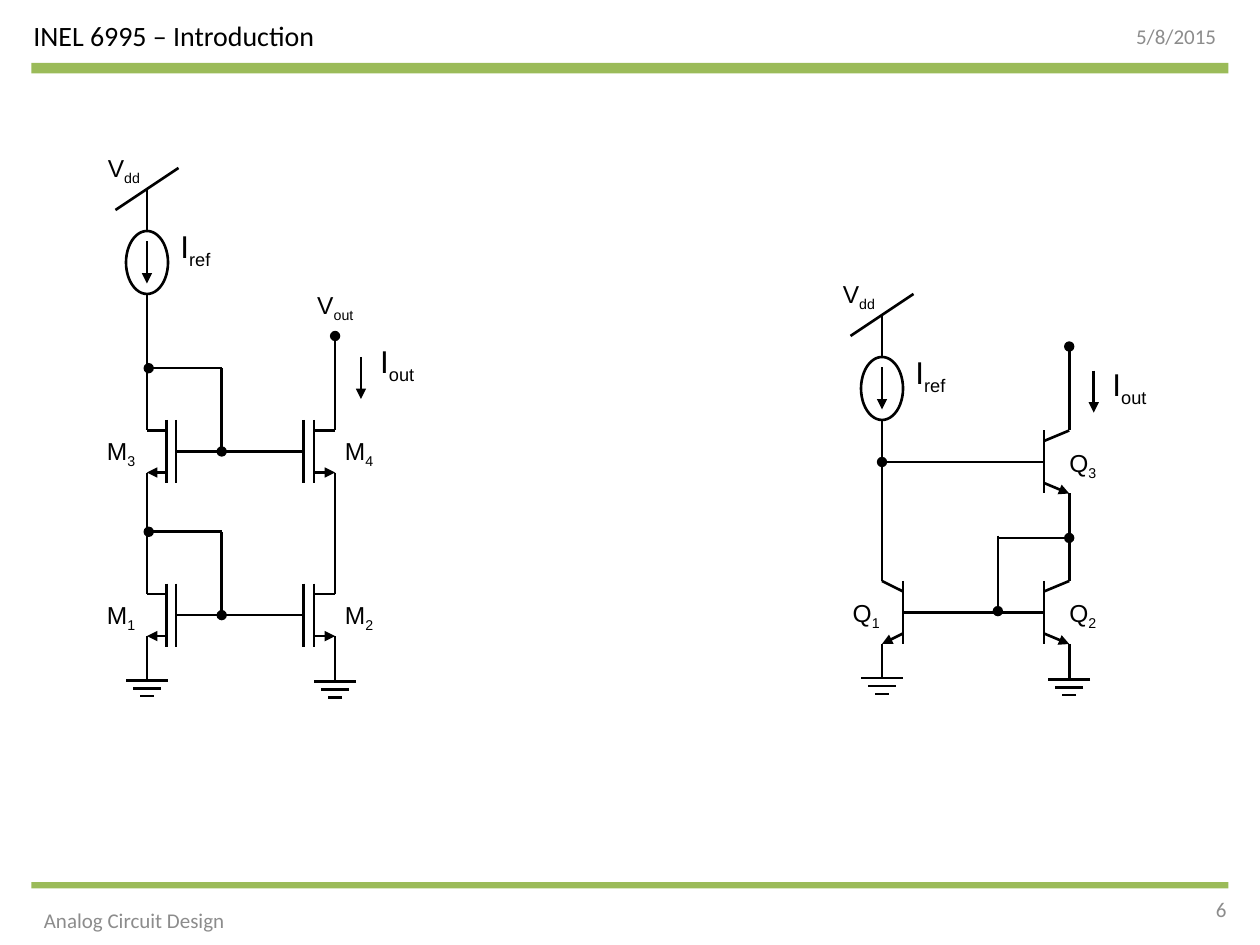
from lxml import etree
from pptx import Presentation
from pptx.dml.color import RGBColor
from pptx.enum.shapes import MSO_CONNECTOR, MSO_SHAPE
from pptx.enum.text import MSO_ANCHOR, MSO_AUTO_SIZE, PP_ALIGN
from pptx.oxml.ns import qn
from pptx.util import Pt

STRAIGHT = MSO_CONNECTOR.STRAIGHT
OVAL, RECTANGLE = MSO_SHAPE.OVAL, MSO_SHAPE.RECTANGLE
LEFT, RIGHT = PP_ALIGN.LEFT, PP_ALIGN.RIGHT
MIDDLE = MSO_ANCHOR.MIDDLE
FIT_SHAPE = MSO_AUTO_SIZE.SHAPE_TO_FIT_TEXT
rgb = RGBColor.from_string
BLACK, GRAY, GREEN = "000000", "8C8C8C", "9BBB59"
LINE_WIDTH = Pt(1.5)


def wire(circuit, x1, y1, x2, y2, head=None, tail=None):
    """Draw a line; head and tail name the end marks at its start and end."""
    line = circuit.shapes.add_connector(STRAIGHT, Pt(x1), Pt(y1), Pt(x2), Pt(y2))
    line.line.color.rgb = rgb(BLACK)
    line.line.width = LINE_WIDTH
    properties = line._element.spPr
    outline = properties.find(qn("a:ln"))
    for tag, mark in (("a:headEnd", head), ("a:tailEnd", tail)):
        if mark:
            etree.SubElement(outline, qn(tag), type=mark)
    etree.SubElement(properties, qn("a:effectLst"))


def label(circuit, x, y, symbol, subscript, width, size=14):
    height = 28.8 if size == 18 else 24.5
    box = circuit.shapes.add_textbox(Pt(x), Pt(y), Pt(width), Pt(height))
    frame = box.text_frame
    frame.word_wrap = False
    frame.auto_size = FIT_SHAPE
    paragraph = frame.paragraphs[0]
    paragraph.font.size = Pt(size)
    paragraph.font.name = "Arial"
    paragraph.font.color.rgb = rgb(BLACK)
    paragraph.add_run().text = symbol
    lowered = paragraph.add_run()
    lowered.text = subscript
    lowered._r.get_or_add_rPr().set("baseline", "-25000")


prs = Presentation()
prs.slide_width, prs.slide_height = Pt(720), Pt(540)
slide = prs.slides.add_slide(prs.slide_layouts[6])

# Header and footer
for top, height in ((36, 6), (504, 3.6)):
    rule = slide.shapes.add_shape(RECTANGLE, Pt(18), Pt(top), Pt(684), Pt(height))
    rule.shadow.inherit = False
    rule.fill.solid()
    rule.fill.fore_color.rgb = rgb(GREEN)
    rule.line.fill.background()

for left, top, width, text, size, color, align in (
    (12, 6, 240, "INEL 6995 – Introduction", 16, BLACK, LEFT),
    (534, 6, 168, "5/8/2015", 12, GRAY, RIGHT),
    (18, 511.2, 126, "Analog Circuit Design", 12, GRAY, LEFT),
    (540, 505.2, 168, "6", 12, GRAY, RIGHT),
):
    box = slide.shapes.add_textbox(Pt(left), Pt(top), Pt(width), Pt(28.8))
    frame = box.text_frame
    frame.word_wrap = True
    frame.vertical_anchor = MIDDLE
    paragraph = frame.paragraphs[0]
    paragraph.text = text
    paragraph.alignment = align
    paragraph.font.size = Pt(size)
    paragraph.font.name = "Calibri"
    paragraph.font.color.rgb = rgb(color)

mos = slide.shapes.add_group_shape()
bipolar = slide.shapes.add_group_shape()
MOS_REF, MOS_OUT = 84, 191.5
BJT_REF, BJT_OUT = 504, 611

# Supply and reference current source of each mirror
for circuit, x, top in ((mos, MOS_REF, 96), (bipolar, BJT_REF, 168)):
    wire(circuit, x + 18, top, x - 18, top + 24)
    wire(circuit, x, top + 12, x, top + 36)
    source = circuit.shapes.add_shape(OVAL, Pt(x - 12), Pt(top + 36), Pt(24), Pt(36))
    source.shadow.inherit = False
    source.fill.background()
    source.line.color.rgb = rgb(BLACK)
    source.line.width = LINE_WIDTH
    wire(circuit, x, top + 42, x, top + 66, tail="triangle")
    wire(circuit, x, top + 72, x, top + 84)
    label(circuit, x - 29.5, top - 12, "V", "dd", 34.6)
    label(circuit, x + 12, top + 30, "I", "ref", 33.8, 18)

# Grounds
for circuit, x, y in (
    (mos, MOS_REF, 388.8), (mos, MOS_OUT, 389.5),
    (bipolar, BJT_REF, 387.5), (bipolar, BJT_OUT, 388.2),
):
    wire(circuit, x, y - 9, x, y)
    for step, half_width in enumerate((12, 8, 4)):
        bar_y = y + 4.5 * step
        wire(circuit, x + half_width, bar_y, x - half_width, bar_y)

# Output terminals: node, current arrow and its label
for circuit, x, y, arrow_x, arrow_y, label_x, label_y in (
    (mos, MOS_OUT, 192, 206.3, 204, 210.2, 192.2),
    (bipolar, BJT_OUT, 198, 625, 211.8, 628.6, 205.2),
):
    wire(circuit, x, y, x, y + 36, head="oval")
    wire(circuit, arrow_x, arrow_y, arrow_x, arrow_y + 24, tail="triangle")
    label(circuit, label_x, label_y, "I", "out", 36.7, 18)
label(mos, 174.2, 162, "V", "out", 36.7)

# MOS transistors, two per stage, with the diode connection on the left one
for y, ref_number, out_number in ((351.5, "1", "2"), (258, "3", "4")):
    for x, channel, gate, lead, number, label_x in (
        (MOS_REF, 11, 16.5, 33, ref_number, 54),
        (MOS_OUT, -12, -18, -36, out_number, 190),
    ):
        wire(mos, x, y - 30, x, y - 12)
        wire(mos, x, y + 12, x, y + 30)
        wire(mos, x, y - 12, x + channel, y - 12)
        wire(mos, x, y + 12, x + channel, y + 12, head="triangle")
        for plate in (channel, gate):
            wire(mos, x + plate, y - 18, x + plate, y + 18)
        wire(mos, x + gate, y, x + lead, y)
        label(mos, label_x, y - 12.2, "M", number, 31.7)
    loop_y = y - 47.6
    wire(mos, 159, y, 116.6, y)
    wire(mos, 126.7, loop_y, 126.7, y, tail="oval")
    wire(mos, 126.7, loop_y, 85, loop_y, tail="oval")

for x, start, end in (
    (MOS_REF, 174, 229), (MOS_REF, 283, 322.5), (MOS_OUT, 283, 322),
):
    wire(mos, x, start, x, end)

# Bipolar transistors
for x, y, base, lead, number, label_x in (
    (BJT_REF, 350, 12, 30, "1", 480.2),
    (BJT_OUT, 350, -14.4, -36, "2", 604),
    (BJT_OUT, 264, -14.4, -36, "3", 604),
):
    wire(bipolar, x, y - 30, x, y - 18)
    wire(bipolar, x, y + 18, x, y + 30)
    wire(bipolar, x, y - 18, x + base, y - 12)
    wire(bipolar, x, y + 18, x + base, y + 12, head="triangle")
    wire(bipolar, x + base, y - 18, x + base, y + 18)
    wire(bipolar, x + base, y, x + lead, y)
    label(bipolar, label_x, y - 11.8, "Q", number, 31.7)

wire(bipolar, 576.7, 350, 523.4, 350)
wire(bipolar, 570.2, 306, 570.2, 349.2, tail="oval")
wire(bipolar, 570.2, 307.4, BJT_OUT, 307.4, tail="oval")
wire(bipolar, BJT_REF, 249, BJT_REF, 321)
wire(bipolar, BJT_OUT, 294, BJT_OUT, 324.7)
wire(bipolar, BJT_REF, 264, 577.4, 264, head="oval")

prs.save("out.pptx")
